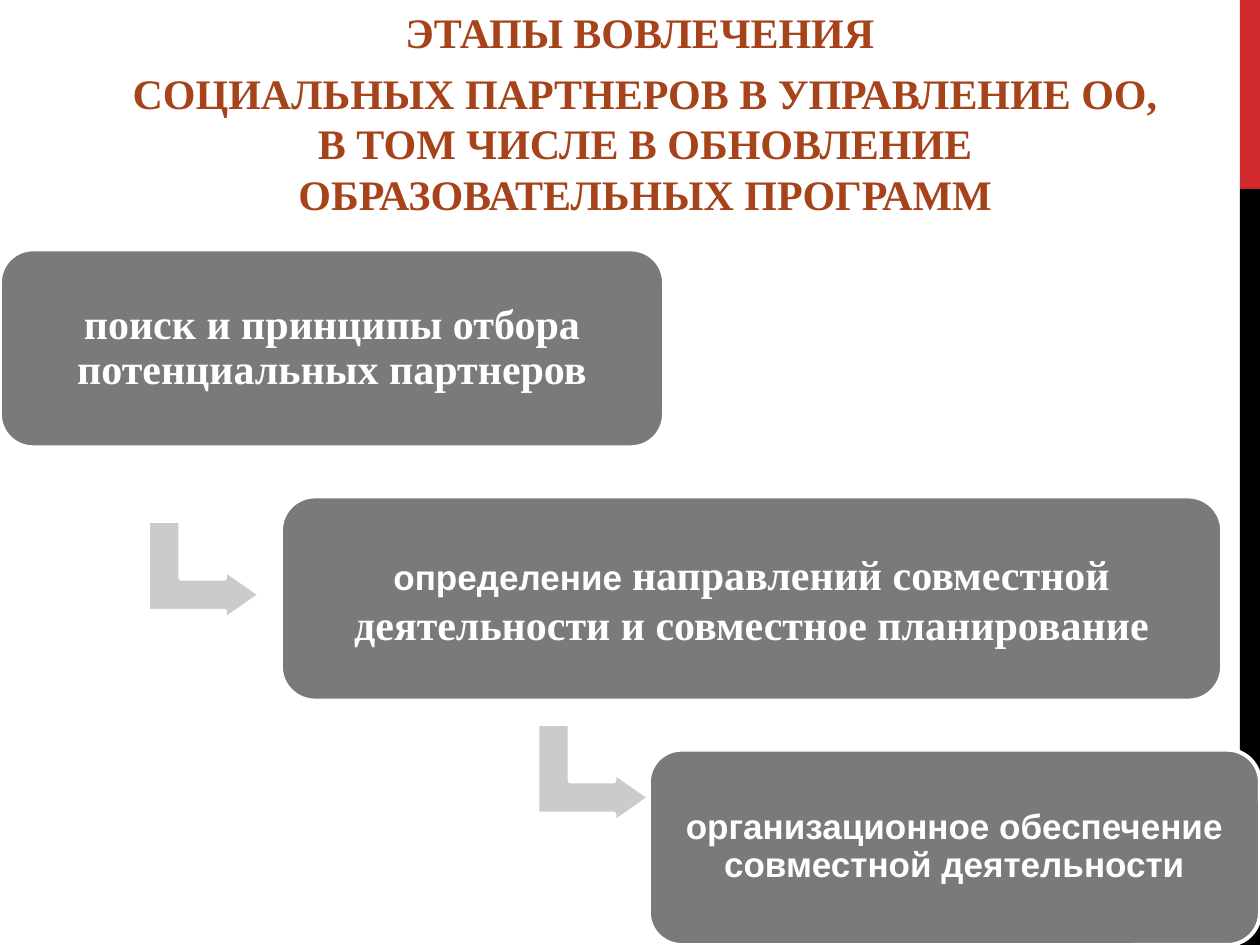
from dataclasses import dataclass

from pptx import Presentation, util as u
from pptx.dml.color import RGBColor
from pptx.enum import shapes, text

COLORS = {"heading": "A6431A", "stage": "7A7A7A", "arrow": "CBCBCB",
          "white": "FFFFFF", "red": "D1282E", "black": "000000"}
SERIF, SANS = "Times New Roman", "Arial"
COLUMNS, ROWS = 100, 75

prs = Presentation()
prs.slide_width, prs.slide_height = u.Inches(10), u.Inches(7.5)
COLUMN, ROW = prs.slide_width / COLUMNS, prs.slide_height / ROWS


@dataclass
class Area:
    """Left, top, width and height in grid columns and rows."""
    left: float
    top: float
    width: float
    height: float

    def emu(self) -> tuple[int, int, int, int]:
        return (round(self.left * COLUMN), round(self.top * ROW),
                round(self.width * COLUMN), round(self.height * ROW))


@dataclass
class Phrase:
    words: str
    font: str
    size: int


@dataclass
class Stage:
    area: Area
    phrases: list[Phrase]
    inset: float
    spacing: float = 0.9


def rgb(name: str) -> RGBColor:
    return RGBColor.from_string(COLORS[name])


def style(font, face: str, size: int, color: str) -> None:
    font.name, font.size, font.bold = face, u.Pt(size), True
    font.color.rgb = rgb(color)


def add_block(slide, kind, area: Area, fill: str, outlined: bool = True):
    block = slide.shapes.add_shape(kind, *area.emu())
    block.shadow.inherit = False
    block.fill.solid()
    block.fill.fore_color.rgb = rgb(fill)
    if outlined:
        block.line.color.rgb = rgb("white")
        block.line.width = u.Pt(2.25)
    else:
        block.line.fill.background()
    return block


def add_arrow(slide, area: Area) -> None:
    """Add an arrow that goes down and then right."""
    arrow = add_block(slide, shapes.MSO_SHAPE.BENT_UP_ARROW, area, "arrow")
    arrow.rotation = 90
    for index, share in enumerate((0.328, 0.25, 0.358)):
        arrow.adjustments[index] = share


def add_stage(slide, stage: Stage) -> None:
    box = add_block(slide, shapes.MSO_SHAPE.ROUNDED_RECTANGLE, stage.area, "stage")
    frame = box.text_frame
    frame.word_wrap = True
    frame.vertical_anchor = text.MSO_ANCHOR.MIDDLE
    inset = u.Inches(stage.inset)
    frame.margin_left = frame.margin_right = inset
    frame.margin_top = frame.margin_bottom = inset
    paragraph = frame.paragraphs[0]
    paragraph.alignment = text.PP_ALIGN.CENTER
    paragraph.line_spacing = stage.spacing
    for phrase in stage.phrases:
        run = paragraph.add_run()
        run.text = phrase.words
        style(run.font, phrase.font, phrase.size, "white")


def fill_heading(heading, area: Area, lines: list[str]) -> None:
    heading.left, heading.top, heading.width, heading.height = area.emu()
    frame = heading.text_frame
    frame.word_wrap = True
    frame.auto_size = text.MSO_AUTO_SIZE.NONE
    frame.vertical_anchor = text.MSO_ANCHOR.TOP
    frame.text = "\n".join(lines)
    for paragraph in frame.paragraphs:
        paragraph.alignment = text.PP_ALIGN.CENTER
        paragraph.space_before, paragraph.space_after = u.Pt(0), u.Pt(6)
        style(paragraph.font, SERIF, 24, "heading")


HEADING = ["ЭТАПЫ ВОВЛЕЧЕНИЯ ",
           "СОЦИАЛЬНЫХ ПАРТНЕРОВ В УПРАВЛЕНИЕ ОО, В ТОМ ЧИСЛЕ "
           "В ОБНОВЛЕНИЕ ОБРАЗОВАТЕЛЬНЫХ ПРОГРАММ"]
SIDE_BARS = {"red": Area(98.4, 0, 1.6, 15), "black": Area(98.4, 15, 1.6, 60)}
ARROWS = [Area(12.3, 40.8, 7.8, 8.9), Area(43.2, 56.9, 7.8, 8.9)]
STAGES = [
    Stage(Area(0, 19.8, 52.7, 15.7),
          [Phrase("поиск и принципы отбора потенциальных партнеров", SERIF, 24)], 0.18),
    Stage(Area(22.3, 39.4, 74.7, 16.2),
          [Phrase("определение ", SANS, 20),
           Phrase("направлений совместной деятельности и совместное планирование",
                  SERIF, 24)], 0.16, spacing=1.0),
    Stage(Area(51.5, 59.5, 48.5, 15.5),
          [Phrase("организационное обеспечение совместной деятельности", SANS, 20)], 0.16),
]


def main() -> None:
    slide = prs.slides.add_slide(prs.slide_layouts[5])
    for color, area in SIDE_BARS.items():
        add_block(slide, shapes.MSO_SHAPE.RECTANGLE, area, color, outlined=False)
    fill_heading(slide.shapes.title, Area(8.5, 0, 85.4, 10.6), HEADING)
    for arrow_area in ARROWS:
        add_arrow(slide, arrow_area)
    for stage in STAGES:
        add_stage(slide, stage)
    prs.save("out.pptx")


if __name__ == "__main__":
    main()
